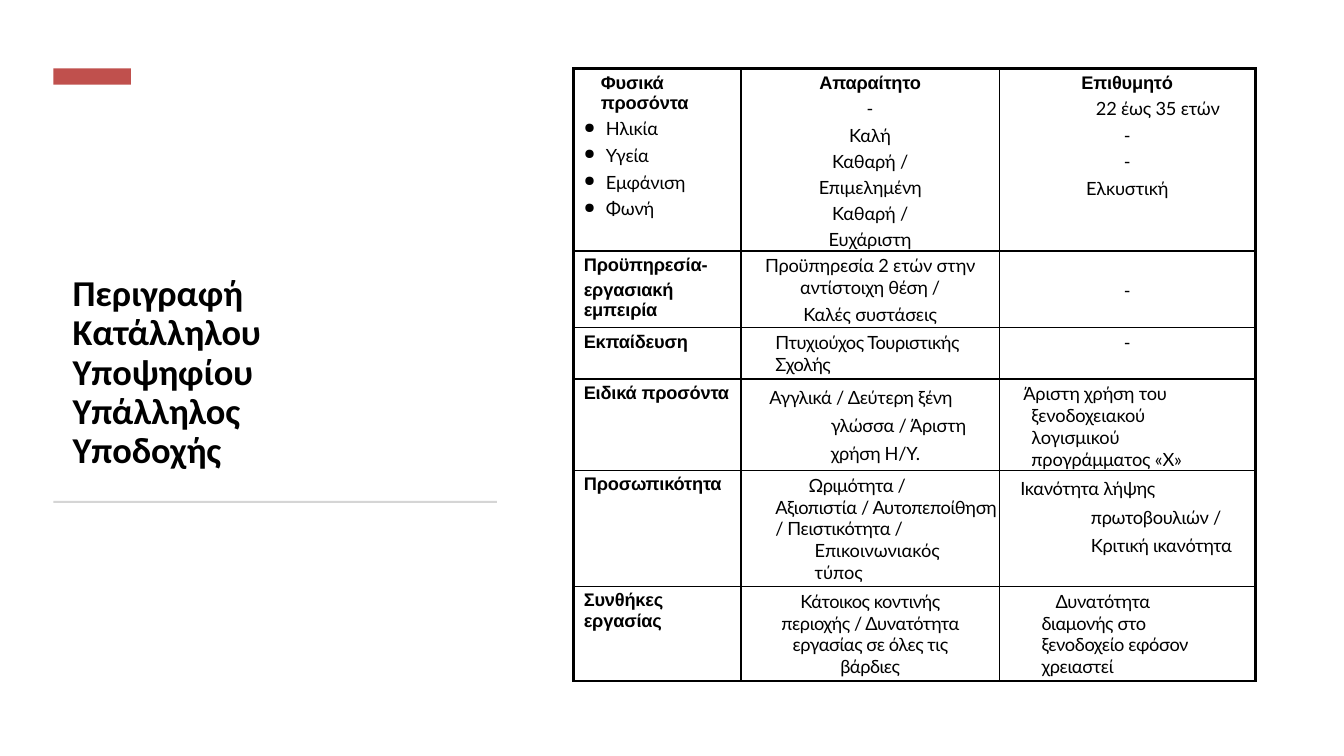
from lxml.etree import SubElement
from pptx import Presentation
from pptx.dml.color import RGBColor
from pptx.enum.shapes import MSO_SHAPE
from pptx.enum.text import MSO_ANCHOR, MSO_AUTO_SIZE, PP_ALIGN
from pptx.oxml import parse_xml
from pptx.oxml.ns import nsdecls, qn
from pptx.util import Inches, Pt

COLUMN_WIDTHS = [1.66, 2.56, 2.54]
ROW_HEIGHTS = [1.81, 0.76, 0.51, 0.79, 1.15, 0.94]
BLACK = "000000"


def color(value):
    return RGBColor.from_string(value)


def write(para, text, font="Lato", size=13, bold=False, align=PP_ALIGN.LEFT,
          left=0, right=0, first=0, before=0, line=None, tracking=-0.1, bullet=None):
    para.alignment = align
    para.space_before = Pt(before)
    if line:
        para.line_spacing = line
    span = para.add_run()
    span.text = text
    span.font.name = font
    span.font.size = Pt(size)
    span.font.bold = bold
    span.font.color.rgb = color(BLACK)
    span.font._element.set("spc", str(round(tracking * 100)))
    properties = para._p.get_or_add_pPr()
    for name, length in (("marL", left), ("marR", right), ("indent", first)):
        properties.set(name, str(Inches(length)))
    if bullet:
        SubElement(properties, qn("a:buSzPct"), val="79000")
        SubElement(properties, qn("a:buChar"), char=bullet)


def heading(text, **options):
    return text, {"font": "Arial", "bold": True, "before": 3.2, "left": 0.1, **options}


def centered(text, **options):
    return text, {"align": PP_ALIGN.CENTER, "before": 3.4, **options}


def indented(text, left, first=0, **options):
    return text, {"left": left, "first": first, "before": 3.2, **options}


def item(text):
    return indented(text, 0.32, -0.22, before=3.4, bullet="●")


def column_heading(text):
    return heading(text, align=PP_ALIGN.CENTER, left=0)


def spaced(text, left, first):
    return indented(text, left, first, before=1.1, line=Pt(20.2), tracking=-0.2)


ROWS = [
    [
        [heading("Φυσικά προσόντα", left=0.27),
         *map(item, ["Ηλικία", "Υγεία", "Εμφάνιση", "Φωνή"])],
        [column_heading("Απαραίτητο"), centered("-"), centered("Καλή"),
         centered("Καθαρή / Επιμελημένη Καθαρή / Ευχάριστη",
                  left=0.71, right=0.71, before=0, line=1.2)],
        [column_heading("Επιθυμητό"), indented("22 έως 35 ετών", 0.96, before=3.4),
         centered("-"), centered("-"), centered("Ελκυστική")],
    ],
    [
        [heading("Προϋπηρεσία-"), heading("εργασιακή εμπειρία", before=3.4)],
        [centered("Προϋπηρεσία 2 ετών στην"),
         centered("αντίστοιχη θέση /", before=0, tracking=-0.2),
         centered("Καλές συστάσεις")],
        [centered("-")],
    ],
    [
        [heading("Εκπαίδευση")],
        [indented("Πτυχιούχος Τουριστικής Σχολής", 0.34, tracking=-0.3)],
        [centered("-")],
    ],
    [
        [heading("Ειδικά προσόντα")],
        [spaced("Αγγλικά / Δεύτερη ξένη γλώσσα / Άριστη χρήση Η/Υ.", 0.89, -0.61)],
        [indented("Άριστη χρήση του ξενοδοχειακού λογισμικού προγράμματος «Χ»",
                  0.32, -0.08, right=0.5)],
    ],
    [
        [heading("Προσωπικότητα")],
        [indented("Ωριμότητα / Αξιοπιστία / Αυτοπεποίθηση / Πειστικότητα /",
                  0.34, 0.33, tracking=-0.25),
         indented("Επικοινωνιακός τύπος", 0.73, before=0, right=0.3, tracking=0)],
        [spaced("Ικανότητα λήψης πρωτοβουλιών / Κριτική ικανότητα", 0.91, -0.7)],
    ],
    [
        [heading("Συνθήκες εργασίας")],
        [centered("Κάτοικος κοντινής περιοχής / Δυνατότητα εργασίας σε όλες τις βάρδιες",
                  left=0.3, right=0.3, tracking=-0.3)],
        [indented("Δυνατότητα διαμονής στο ξενοδοχείο εφόσον χρειαστεί",
                  0.42, 0.14, right=0.5, tracking=-0.25)],
    ],
]
TOP_MARGINS = {(1, 2): 0.28, (3, 1): 0.01, (4, 2): 0.01}


def add_title(page, text):
    box = page.shapes.title
    box.left, box.top, box.width, box.height = map(Inches, (0.52, 1.23, 4.4, 3.5))
    frame = box.text_frame
    frame.word_wrap = True
    frame.auto_size = MSO_AUTO_SIZE.NONE
    frame.vertical_anchor = MSO_ANCHOR.BOTTOM
    write(frame.paragraphs[0], text, font="Calibri", size=26, bold=True,
          left=0.1, right=1.9, line=0.9)


def add_bar(page, left, top, width, height, fill):
    bar = page.shapes.add_shape(MSO_SHAPE.RECTANGLE, *map(Inches, (left, top, width, height)))
    bar.shadow.inherit = False
    bar.fill.solid()
    bar.fill.fore_color.rgb = color(fill)
    bar.line.fill.background()


def set_borders(cell, widths):
    properties = cell._tc.get_or_add_tcPr()
    for position, (side, width) in enumerate(widths.items()):
        properties.insert(position, parse_xml(
            f'<a:ln{side} {nsdecls("a")} w="{Pt(width)}"><a:solidFill>'
            f'<a:srgbClr val="{BLACK}"/></a:solidFill></a:ln{side}>'))


def fill_cell(cell, paragraphs, top_margin):
    cell.fill.background()
    cell.margin_left = cell.margin_right = cell.margin_bottom = 0
    cell.margin_top = Inches(top_margin)
    frame = cell.text_frame
    for index, (text, options) in enumerate(paragraphs):
        para = frame.add_paragraph() if index else frame.paragraphs[0]
        write(para, text, **options)


def add_requirements(page):
    last_row, last_column = len(ROW_HEIGHTS) - 1, len(COLUMN_WIDTHS) - 1
    table = page.shapes.add_table(
        len(ROW_HEIGHTS), len(COLUMN_WIDTHS), Inches(5.69), Inches(0.68),
        Inches(sum(COLUMN_WIDTHS)), Inches(sum(ROW_HEIGHTS))).table
    table.first_row = table.horz_banding = False
    for column, width in zip(table.columns, COLUMN_WIDTHS):
        column.width = Inches(width)
    for row, height in zip(table.rows, ROW_HEIGHTS):
        row.height = Inches(height)
    for r, contents in enumerate(ROWS):
        for c, paragraphs in enumerate(contents):
            cell = table.cell(r, c)
            fill_cell(cell, paragraphs, TOP_MARGINS.get((r, c), 0.04))
            outer = {"L": c == 0, "R": c == last_column, "T": r == 0, "B": r == last_row}
            set_borders(cell, {side: 2.25 if edge else 1 for side, edge in outer.items()})


def main():
    deck = Presentation()
    deck.slide_width, deck.slide_height = Inches(13.33), Inches(7.5)
    page = deck.slides.add_slide(deck.slide_layouts.get_by_name("Title Only"))
    add_title(page, "Περιγραφή Κατάλληλου Υποψηφίου Υπάλληλος Υποδοχής")
    add_bar(page, 0.53, 0.68, 0.77, 0.16, "C0504D")
    add_bar(page, 0.53, 4.97, 4.4, 0.02, "D5D5D5")
    add_requirements(page)
    deck.save("out.pptx")


if __name__ == "__main__":
    main()
